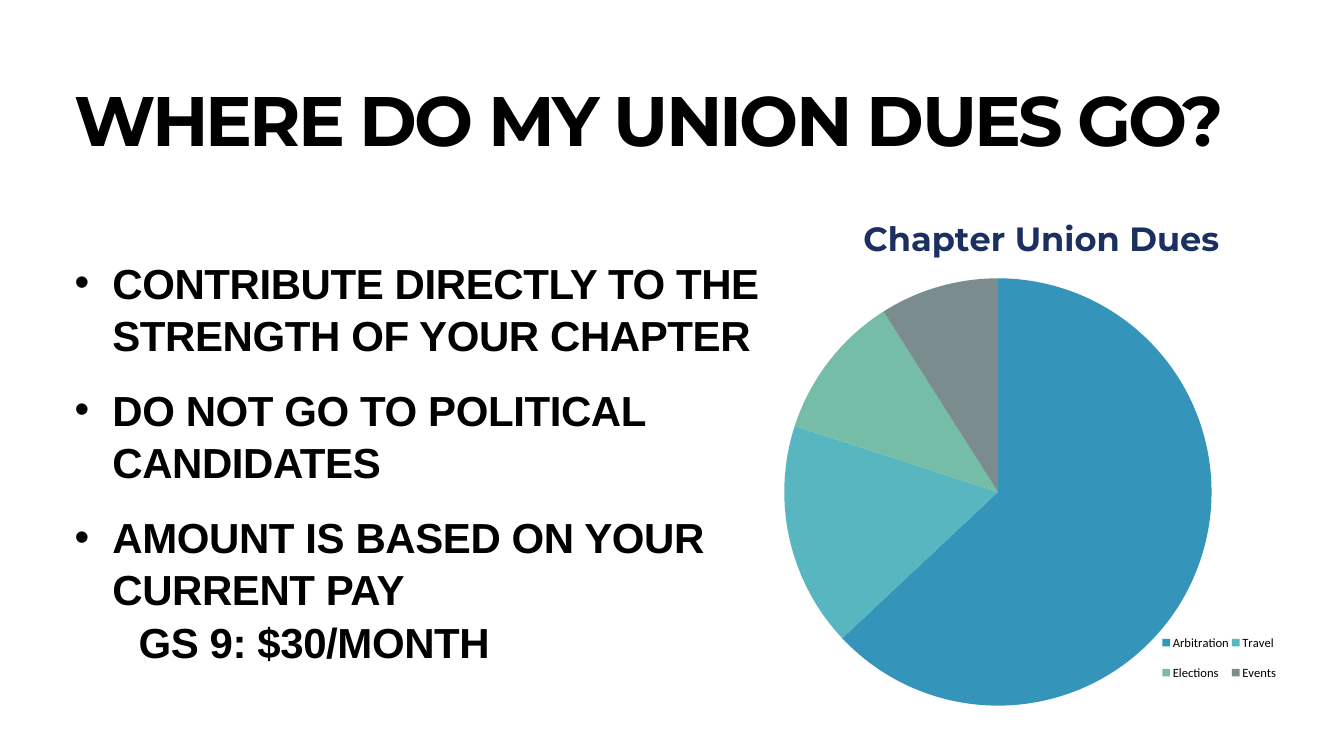
from dataclasses import dataclass

from lxml.etree import SubElement
from pptx import Presentation
from pptx.chart.data import CategoryChartData
from pptx.dml.color import RGBColor
from pptx.enum.chart import XL_CHART_TYPE, XL_LEGEND_POSITION
from pptx.enum.text import MSO_ANCHOR, MSO_AUTO_SIZE, PP_ALIGN
from pptx.oxml.ns import qn
from pptx.util import Inches, Pt


@dataclass(frozen=True)
class Theme:
    """Colours, fonts and type sizes of the slide."""
    ink: RGBColor = RGBColor.from_string("000000")
    navy: RGBColor = RGBColor.from_string("1B3060")
    slices: tuple = ("3494BA", "58B6C0", "75BDA7", "7A8C8E")
    heading_font: str = "Montserrat"
    body_font: str = "Arial"
    legend_font: str = "Calibri"
    heading_size: int = 100
    body_size: int = 60
    chart_title_size: int = 48
    legend_size: int = 18


THEME = Theme()
HEADING = "WHERE DO MY UNION DUES GO?"
POINTS = (
    "CONTRIBUTE DIRECTLY TO THE STRENGTH OF YOUR CHAPTER",
    "DO NOT GO TO POLITICAL CANDIDATES",
    "AMOUNT IS BASED ON YOUR CURRENT PAY",
)
PAY_EXAMPLE = "GS 9: $30/MONTH"
DUES = {"Arbitration": 63, "Travel": 17, "Elections": 11, "Events": 9}


def style_font(font, name, size, color, bold=False):
    """Apply a typeface, size, colour and weight."""
    font.name, font.size, font.bold = name, Pt(size), bold
    font.color.rgb = color


def place_frame(placeholder, box):
    """Move a placeholder to its box and return its prepared text frame."""
    placeholder.left, placeholder.top, placeholder.width, placeholder.height = map(Inches, box)
    frame = placeholder.text_frame
    frame.word_wrap = True
    frame.auto_size = MSO_AUTO_SIZE.NONE
    frame.vertical_anchor = MSO_ANCHOR.TOP
    frame.margin_left = frame.margin_right = Inches(0.06)
    frame.margin_top = frame.margin_bottom = Inches(0.06)
    return frame


def track(paragraph, points):
    """Set the letter spacing of every run."""
    for run in paragraph.runs:
        run.font._element.set("spc", str(int(points * 100)))


def indent(paragraph, margin, first_line, bullet=None):
    """Set the indents and the bullet of a paragraph."""
    properties = paragraph._p.get_or_add_pPr()
    properties.set("marL", str(Inches(margin)))
    properties.set("indent", str(Inches(first_line)))
    if bullet:
        SubElement(properties, qn("a:buFont"), typeface=THEME.body_font)
        SubElement(properties, qn("a:buChar"), char=bullet)
    else:
        SubElement(properties, qn("a:buNone"))


def add_heading(placeholder, box):
    """Fill the title placeholder."""
    frame = place_frame(placeholder, box)
    frame.text = HEADING
    heading = frame.paragraphs[0]
    heading.alignment = PP_ALIGN.LEFT
    heading.line_spacing = 0.8
    style_font(heading.runs[0].font, THEME.heading_font, THEME.heading_size, THEME.ink, True)
    track(heading, -4)


def add_points(placeholder, box):
    """Fill the body placeholder with the bullets and the pay example."""
    frame = place_frame(placeholder, box)
    frame.text = "\n".join((*POINTS, PAY_EXAMPLE))
    for position, point in enumerate(frame.paragraphs):
        is_bullet = position < len(POINTS)
        point.alignment = PP_ALIGN.LEFT
        point.line_spacing = 1.04
        point.space_before = Pt(32 if is_bullet and position else 0)
        if is_bullet:
            indent(point, 0.75, -0.75, "•")
        else:
            indent(point, 1.27, 0)
        style_font(point.runs[0].font, THEME.body_font, THEME.body_size, THEME.ink, True)
        track(point, -0.6)


def set_layout(part, index, **fractions):
    """Give a chart part a manual layout in fractions of the chart."""
    for previous in part.findall(qn("c:layout")):
        part.remove(previous)
    layout = SubElement(part, qn("c:layout"))
    part.insert(index, layout)
    manual = SubElement(layout, qn("c:manualLayout"))
    if part.tag == qn("c:plotArea"):
        SubElement(manual, qn("c:layoutTarget"), val="inner")
    for axis in ("x", "y"):
        SubElement(manual, qn(f"c:{axis}Mode"), val="edge")
    for name, fraction in fractions.items():
        SubElement(manual, qn(f"c:{name}"), val=str(fraction))


def add_dues_chart(slide, box):
    """Draw the pie of chapter dues with its title and legend."""
    dues = CategoryChartData()
    dues.categories = list(DUES)
    dues.add_series("Series 1", list(DUES.values()))
    chart = slide.shapes.add_chart(XL_CHART_TYPE.PIE, *map(Inches, box), dues).chart
    style_font(chart.font, THEME.legend_font, THEME.legend_size, THEME.ink)

    chart.has_title = True
    caption = chart.chart_title.text_frame
    caption.text = "Chapter Union Dues"
    style_font(caption.paragraphs[0].runs[0].font, THEME.heading_font,
               THEME.chart_title_size, THEME.navy, True)
    set_layout(chart.chart_title._element, 1, x=0.15, y=0.04)

    pie = chart.plots[0]
    pie.vary_by_categories = True
    for position, color in enumerate(THEME.slices):
        fill = pie.series[0].points[position].format.fill
        fill.solid()
        fill.fore_color.rgb = RGBColor.from_string(color)
    set_layout(chart._chartSpace.chart.plotArea, 0, x=0.01, y=0.17, w=0.82, h=0.8)

    chart.has_legend = True
    chart.legend.position = XL_LEGEND_POSITION.RIGHT
    chart.legend.include_in_layout = False
    style_font(chart.legend.font, THEME.legend_font, THEME.legend_size, THEME.ink)
    set_layout(chart.legend._element, 1, x=0.73, y=0.81, w=0.23, h=0.14)


def build_dues_slide(deck):
    """Compose the heading, the points and the chart."""
    slide = deck.slides.add_slide(deck.slide_layouts[1])
    add_points(slide.placeholders[1], (1.42, 5, 14.74, 8.84))
    add_heading(slide.shapes.title, (1.42, 1.77, 23.92, 1.94))
    add_dues_chart(slide, (15.46, 3.72, 10.34, 10.6))


def main():
    """Build and save the deck."""
    deck = Presentation()
    deck.slide_width, deck.slide_height = Inches(26.67), Inches(15)
    build_dues_slide(deck)
    deck.save("out.pptx")


if __name__ == "__main__":
    main()
